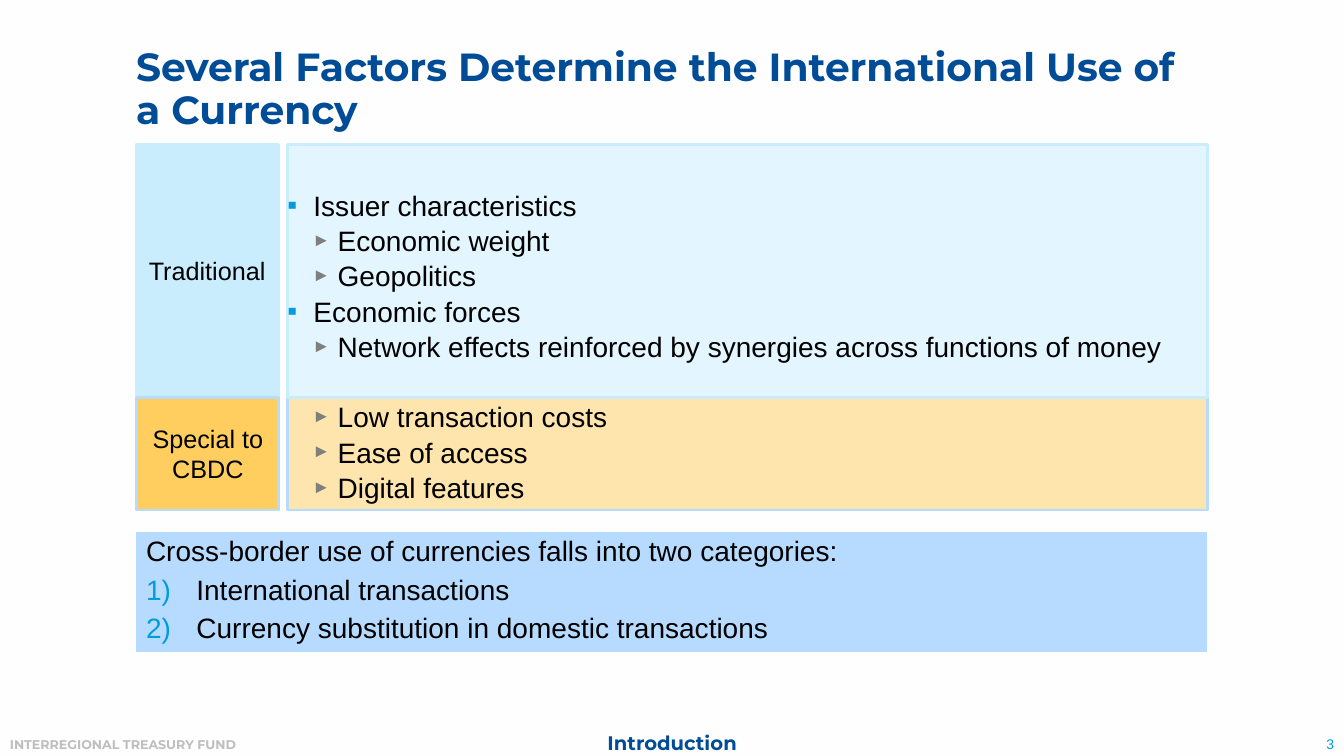
from lxml import etree
from pptx import Presentation
from pptx import util as u
from pptx.dml.color import RGBColor
from pptx.enum import shapes, text
from pptx.oxml.ns import qn

COLORS = {
    "page": "FEFEFE", "navy": "004C97", "cyan": "009CDE", "black": "000000",
    "gray": "7F7F7F", "footer": "BEBEBE",
    "sky": "CAEDFE", "amber": "FFCE5E", "blue": "B7DBFF",
}
LEFT, WIDTH = 97.2, 764.6
LABEL_WIDTH, PANEL_LEFT, PANEL_WIDTH = 101.5, 205.2, 657.4
TABLE_TOP, TRADITIONAL_HEIGHT, SPECIAL_HEIGHT = 103, 180.7, 80.6
SPECIAL_TOP = TABLE_TOP + TRADITIONAL_HEIGHT

SQUARE = dict(bullet="▪", bullet_color="cyan", margin=18.7, indent=-18.7)
ARROW = dict(bullet="►", bullet_color="gray", bullet_size=65,
             margin=36, indent=-18, level=1)
NUMBER = dict(numbering="arabicParenR", bullet_color="cyan",
              margin=36, indent=-36, before=6)
FACTORS = [
    ("Issuer characteristics", SQUARE),
    ("Economic weight", ARROW),
    ("Geopolitics", ARROW),
    ("Economic forces", SQUARE),
    ("Network effects reinforced by synergies across functions of money", ARROW),
    ("Low transaction costs", {**ARROW, "before": 31}),
    ("Ease of access", ARROW),
    ("Digital features", ARROW),
]


def rgb(name):
    return RGBColor.from_string(COLORS[name])


def add_bullet(para, bullet, numbering, color, size, margin, indent):
    props = para._p.get_or_add_pPr()
    props.set("marL", str(u.Pt(margin)))
    props.set("indent", str(u.Pt(indent)))
    if not (bullet or numbering):
        etree.SubElement(props, qn("a:buNone"))
        return
    holder = etree.SubElement(props, qn("a:buClr"))
    etree.SubElement(holder, qn("a:srgbClr"), val=COLORS[color])
    etree.SubElement(props, qn("a:buSzPct"), val=str(size * 1000))
    etree.SubElement(props, qn("a:buFont"), typeface="Arial")
    if numbering:
        etree.SubElement(props, qn("a:buAutoNum"), type=numbering)
    else:
        etree.SubElement(props, qn("a:buChar"), char=bullet)


def write(frame, words, size=20, font="Arial", color="black", bold=False,
          align="LEFT", spacing=1.0, before=0, level=0, margin=0, indent=0,
          bullet=None, numbering=None, bullet_color="black", bullet_size=100):
    """Fill the empty first paragraph, or add another one."""
    para = frame.paragraphs[0] if not frame.text else frame.add_paragraph()
    para.level = level
    para.alignment = text.PP_ALIGN[align]
    para.line_spacing = spacing
    para.space_before, para.space_after = u.Pt(before), u.Pt(0)
    add_bullet(para, bullet, numbering, bullet_color, bullet_size, margin, indent)
    span = para.add_run()
    span.text = words
    span.font.name, span.font.size, span.font.bold = font, u.Pt(size), bold
    span.font.color.rgb = rgb(color)


def set_frame(shape, anchor="TOP", insets=(7.2, 3.6, 7.2, 3.6)):
    frame = shape.text_frame
    frame.word_wrap = True
    frame.auto_size = text.MSO_AUTO_SIZE.NONE
    frame.vertical_anchor = text.MSO_ANCHOR[anchor]
    (frame.margin_left, frame.margin_top,
     frame.margin_right, frame.margin_bottom) = map(u.Pt, insets)
    return frame


def move(shape, box):
    shape.left, shape.top, shape.width, shape.height = map(u.Pt, box)


def add_panel(page, box, fill, line, weight=2, alpha=None):
    panel = page.shapes.add_shape(shapes.MSO_SHAPE.RECTANGLE, *map(u.Pt, box))
    panel.shadow.inherit = False
    panel.fill.solid()
    panel.fill.fore_color.rgb = rgb(fill)
    panel.line.color.rgb = rgb(line)
    panel.line.width = u.Pt(weight)
    if alpha:
        color = panel.fill._xPr.find(qn("a:solidFill"))[0]
        etree.SubElement(color, qn("a:alpha"), val=str(alpha * 1000))
    return panel


def add_label(page, box, words, fill, line):
    label = add_panel(page, box, fill, line)
    write(set_frame(label, "MIDDLE"), words, size=18, align="CENTER")


def fill_title(title, box):
    move(title, box)
    write(set_frame(title, "MIDDLE", (0, 0, 0, 0)),
          "Several Factors Determine the International Use of a Currency",
          size=28, font="Montserrat", color="navy", bold=True, spacing=0.9)


def fill_factors(body, box):
    move(body, box)
    frame = set_frame(body, insets=(0, 36, 0, 0))
    for words, style in FACTORS:
        write(frame, words, **{"spacing": 0.8, "before": 6, **style})


def fill_section(body, box):
    move(body, box)
    write(set_frame(body, "MIDDLE", (0, 10.8, 0, 0)), "Introduction", size=14,
          font="Montserrat", color="navy", bold=True, align="CENTER")


def add_categories(page, box):
    frame = set_frame(add_panel(page, box, "blue", "blue", weight=0.75))
    write(frame, "Cross-border use of currencies falls into two categories:",
          spacing=0.9)
    for words in ("International transactions",
                  "Currency substitution in domestic transactions"):
        write(frame, words, spacing=0.9, **NUMBER)


def add_footer_text(page, box, words, anchor="TOP", **style):
    footer = page.shapes.add_textbox(*map(u.Pt, box))
    write(set_frame(footer, anchor), words, **style)


def bring_to_front(shape):
    shape._element.getparent().append(shape._element)


def build_factors_slide(deck):
    page = deck.slides.add_slide(deck.slide_layouts[3])
    page.background.fill.solid()
    page.background.fill.fore_color.rgb = rgb("page")
    title, factors, section = page.placeholders

    add_footer_text(page, (0, 522.7, 720, 18), "INTERREGIONAL TREASURY FUND",
                    size=9, font="Montserrat", color="footer", bold=True)
    add_footer_text(page, (864.7, 521.3, 95.3, 19.4), "3", anchor="BOTTOM",
                    size=10, color="cyan", align="RIGHT")

    add_panel(page, (PANEL_LEFT, SPECIAL_TOP, PANEL_WIDTH, SPECIAL_HEIGHT),
              "amber", "blue", alpha=50)
    add_panel(page, (PANEL_LEFT, TABLE_TOP, PANEL_WIDTH, TRADITIONAL_HEIGHT),
              "sky", "sky", alpha=50)
    for holder in (title, factors, section):
        bring_to_front(holder)
    fill_title(title, (LEFT, 26, WIDTH, 77))
    fill_factors(factors, (PANEL_LEFT, TABLE_TOP, PANEL_WIDTH, 262))
    fill_section(section, (209.5, 514.8, 541.4, 20.2))

    add_categories(page, (LEFT, 380.2, WIDTH, 85))
    add_label(page, (LEFT, TABLE_TOP, LABEL_WIDTH, TRADITIONAL_HEIGHT),
              "Traditional", "sky", "sky")
    add_label(page, (LEFT + 0.5, SPECIAL_TOP, LABEL_WIDTH, SPECIAL_HEIGHT),
              "Special to CBDC", "amber", "blue")


def main():
    deck = Presentation()
    deck.slide_width, deck.slide_height = u.Pt(960), u.Pt(540)
    build_factors_slide(deck)
    deck.save("out.pptx")


if __name__ == "__main__":
    main()
